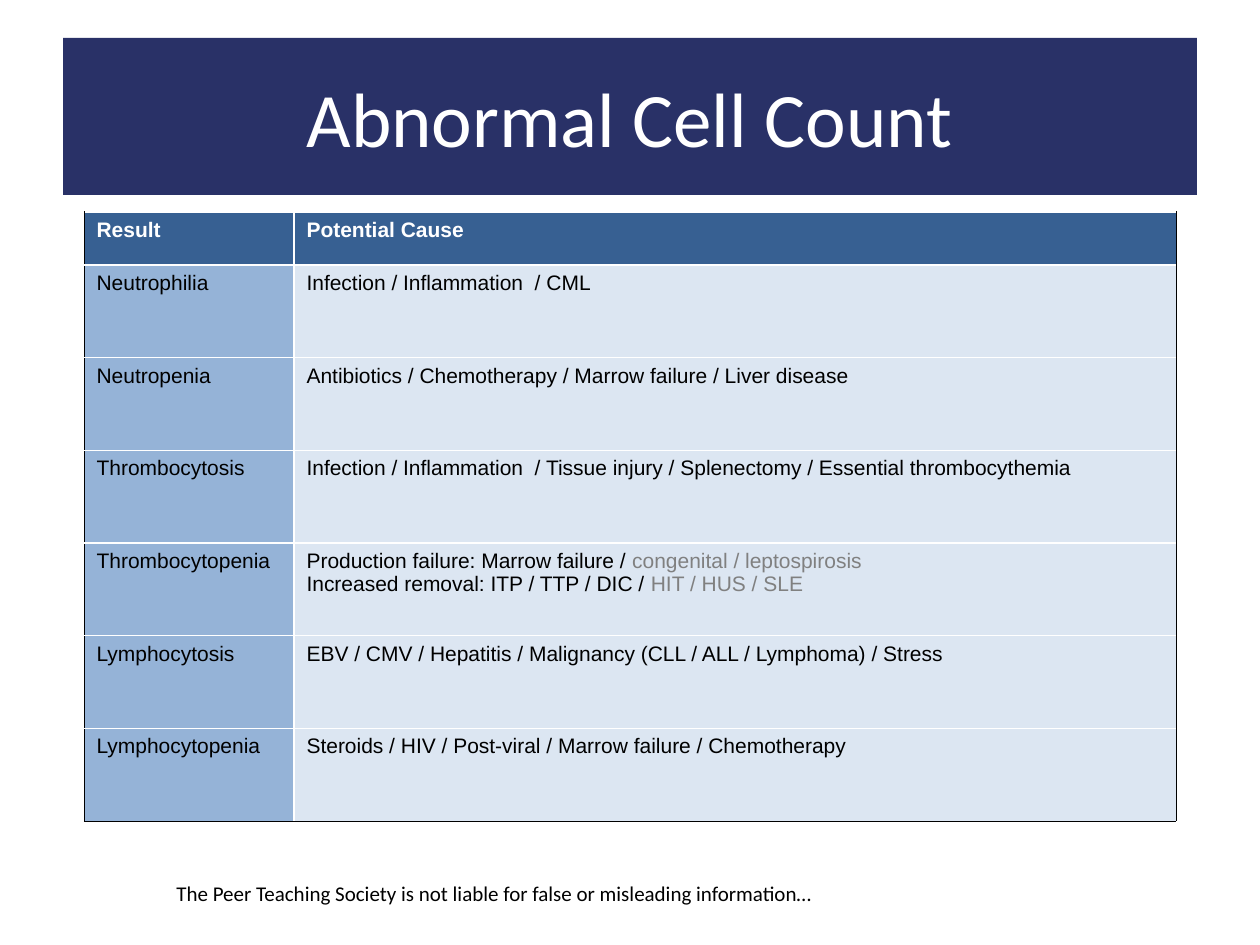
import dataclasses

import lxml.etree
import pptx
import pptx.dml.color
import pptx.enum.text
import pptx.oxml.ns
import pptx.util


@dataclasses.dataclass(frozen=True)
class Theme:
    """Colours, fonts and type sizes of the slide."""
    banner: str = "293167"
    header: str = "376092"
    label: str = "95B3D7"
    body: str = "DCE6F2"
    light: str = "FFFFFF"
    dark: str = "000000"
    muted: str = "808080"
    heading_font: str = "Calibri"
    table_font: str = "Arial"
    title_size: int = 44
    text_size: int = 12
    inner_line: float = 1
    outer_line: float = 0.25


def px(length):
    """Turn pixels at 126 to the inch into EMU."""
    return pptx.util.Emu(round(length * 914400 / 126))


def rgb(colour):
    """Read a hexadecimal colour."""
    return pptx.dml.color.RGBColor.from_string(colour)


class SlideBuilder:
    """Draws styled elements on the current slide."""

    def __init__(self, presentation, theme):
        """Start a slide that has a title placeholder only."""
        self.theme = theme
        self.slide = presentation.slides.add_slide(presentation.slide_layouts[5])

    def style(self, paragraph, font, size, colour, bold=False):
        """Format a whole paragraph."""
        paragraph.font.name = font
        paragraph.font.size = pptx.util.Pt(size)
        paragraph.font.color.rgb = rgb(colour)
        paragraph.font.bold = bold

    def title(self, text, left, top, width, height):
        """Place the title on its banner."""
        banner = self.slide.shapes.title
        banner.left, banner.top = px(left), px(top)
        banner.width, banner.height = px(width), px(height)
        banner.fill.solid()
        banner.fill.fore_color.rgb = rgb(self.theme.banner)
        frame = banner.text_frame
        frame.text = text
        frame.vertical_anchor = pptx.enum.text.MSO_ANCHOR.MIDDLE
        heading = frame.paragraphs[0]
        heading.alignment = pptx.enum.text.PP_ALIGN.CENTER
        self.style(heading, self.theme.heading_font, self.theme.title_size, self.theme.light)

    def text(self, text, left, top, width, height):
        """Add a line of small text."""
        box = self.slide.shapes.add_textbox(px(left), px(top), px(width), px(height))
        box.text_frame.word_wrap = True
        box.text_frame.text = text
        self.style(box.text_frame.paragraphs[0], self.theme.heading_font,
                   self.theme.text_size, self.theme.dark)

    def border(self, cell, side, outer):
        """Draw one side of a cell."""
        qn = pptx.oxml.ns.qn
        points = self.theme.outer_line if outer else self.theme.inner_line
        line = lxml.etree.SubElement(cell._tc.get_or_add_tcPr(), qn(f"a:ln{side}"),
                                     w=str(pptx.util.Pt(points)))
        fill = lxml.etree.SubElement(line, qn("a:solidFill"))
        lxml.etree.SubElement(fill, qn("a:srgbClr"),
                              val=self.theme.dark if outer else self.theme.light)

    def cell(self, cell, lines, fill, colour, bold):
        """Fill a cell with lines of a main text and an optional muted ending."""
        cell.fill.solid()
        cell.fill.fore_color.rgb = rgb(fill)
        for index, (main, *endings) in enumerate(lines):
            frame = cell.text_frame
            paragraph = frame.add_paragraph() if index else frame.paragraphs[0]
            self.style(paragraph, self.theme.table_font, self.theme.text_size, colour, bold)
            paragraph.add_run().text = main
            for ending in endings:
                run = paragraph.add_run()
                run.text = ending
                run.font.color.rgb = rgb(self.theme.muted)

    def table(self, rows, left, top, widths, header_height, height):
        """Add a table with a header row and equal body rows."""
        table = self.slide.shapes.add_table(len(rows), len(widths), px(left), px(top),
                                            px(sum(widths)), px(height)).table
        table.horz_banding = False
        for column, width in zip(table.columns, widths):
            column.width = px(width)
        body_height = (height - header_height) / (len(rows) - 1)
        last_row, last_column = len(rows) - 1, len(widths) - 1
        for r, row in enumerate(rows):
            table.rows[r].height = px(body_height if r else header_height)
            for c, lines in enumerate(row):
                cell = table.cell(r, c)
                edges = {"L": c == 0, "R": c == last_column, "T": False, "B": r == last_row}
                for side, outer in edges.items():
                    self.border(cell, side, outer)
                body_fill = self.theme.body if c else self.theme.label
                self.cell(cell, lines, body_fill if r else self.theme.header,
                          self.theme.dark if r else self.theme.light, r == 0)


CELL_COUNTS = [
    ("Result", [("Potential Cause",)]),
    ("Neutrophilia", [("Infection / Inflammation  / CML",)]),
    ("Neutropenia", [("Antibiotics / Chemotherapy / Marrow failure / Liver disease",)]),
    ("Thrombocytosis", [("Infection / Inflammation  / Tissue injury / Splenectomy / "
                         "Essential thrombocythemia",)]),
    ("Thrombocytopenia", [
        ("Production failure: Marrow failure / ", "congenital / leptospirosis"),
        ("Increased removal: ITP / TTP / DIC / ", "HIT / HUS / SLE"),
    ]),
    ("Lymphocytosis", [("EBV / CMV / Hepatitis / Malignancy (CLL / ALL / Lymphoma) / Stress",)]),
    ("Lymphocytopenia", [("Steroids / HIV / Post-viral / Marrow failure / Chemotherapy",)]),
]


def main():
    """Build and save the slide."""
    presentation = pptx.Presentation()
    presentation.slide_width, presentation.slide_height = px(1260), px(945)
    builder = SlideBuilder(presentation, Theme())
    builder.text("The Peer Teaching Society is not liable for false or misleading information…",
                 164, 874, 698, 38)
    builder.title("Abnormal Cell Count", 63, 38, 1134, 157)
    rows = [([(result,)], causes) for result, causes in CELL_COUNTS]
    builder.table(rows, 84, 212, (210, 882), 53, 609)
    presentation.save("out.pptx")


if __name__ == "__main__":
    main()
